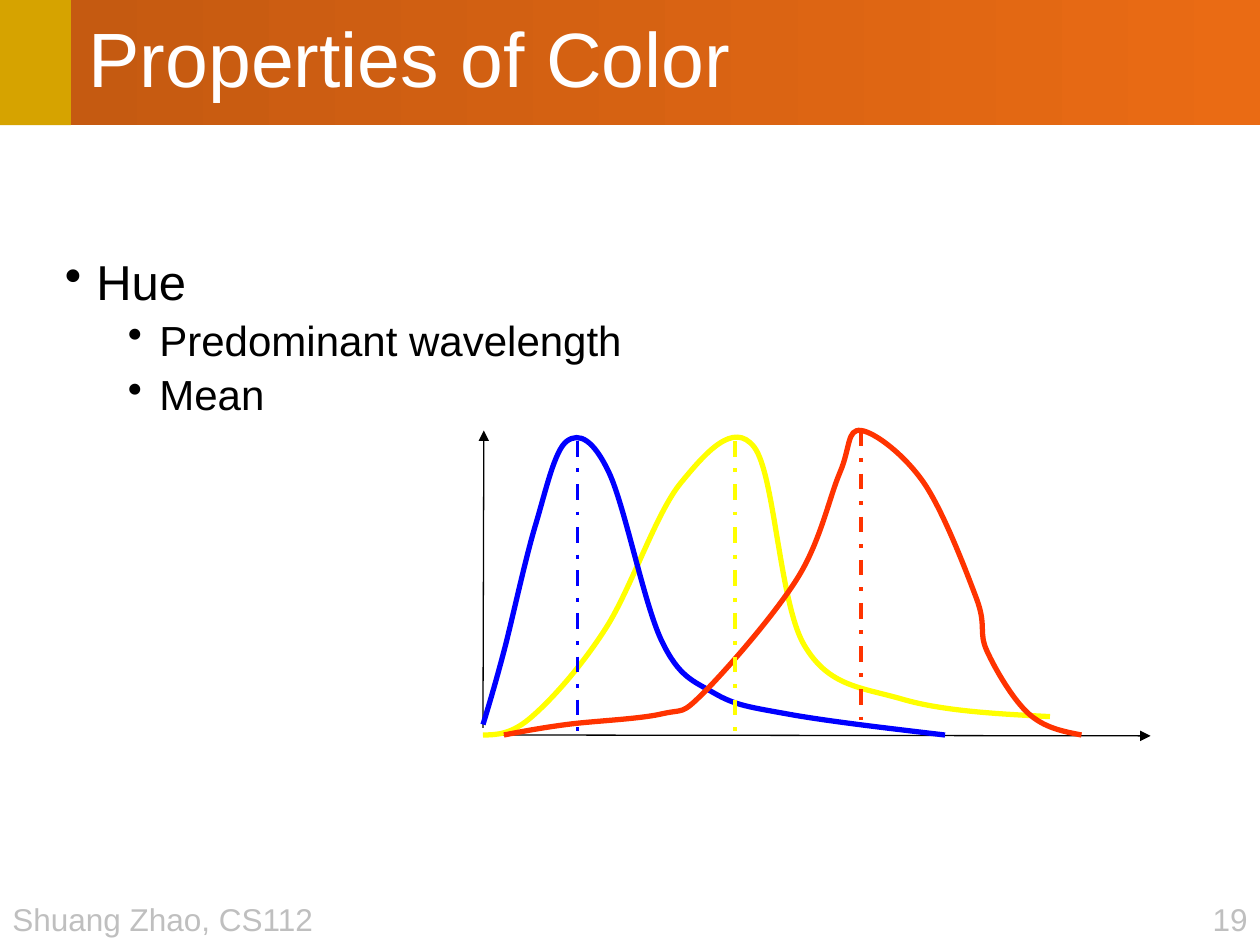
import pptx
import pptx.util
import pptx.dml.color
import pptx.enum.dml
import pptx.enum.shapes
import pptx.enum.text
import pptx.oxml
import pptx.oxml.ns

Pt = pptx.util.Pt
ALIGN = pptx.enum.text.PP_ALIGN
RECTANGLE = pptx.enum.shapes.MSO_SHAPE.RECTANGLE
STRAIGHT = pptx.enum.shapes.MSO_CONNECTOR.STRAIGHT
DRAWING = pptx.oxml.ns.nsdecls("a")

BLACK, WHITE, GRAY, GOLD = "000000", "FFFFFF", "BFBFBF", "D6A300"
DARK_ORANGE, ORANGE = "C55A11", "EA6B14"
BLUE, YELLOW, RED = "0000FF", "FFFF00", "FF3300"


def color(value):
    return pptx.dml.color.RGBColor.from_string(value)


def write(paragraph, text, size, hue, align=ALIGN.LEFT, spacing=1.0,
          before=0, margin=0, indent=0, bullet=None):
    paragraph.alignment = align
    paragraph.line_spacing = spacing
    paragraph.space_before = Pt(before)
    run = paragraph.add_run()
    run.text = text
    run.font.name = "Arial"
    run.font.size = Pt(size)
    run.font.color.rgb = color(hue)
    properties = paragraph._p.get_or_add_pPr()
    properties.set("marL", str(Pt(margin)))
    properties.set("indent", str(Pt(indent)))
    if bullet:
        properties.append(pptx.oxml.parse_xml(f'<a:buChar {DRAWING} char="{bullet}"/>'))


slide_width, slide_height = 720, 540
header_height, accent_width = 71.5, 40.5

deck = pptx.Presentation()
deck.slide_width, deck.slide_height = Pt(slide_width), Pt(slide_height)
shapes = deck.slides.add_slide(deck.slide_layouts[6]).shapes

accent = shapes.add_shape(RECTANGLE, 0, 0, Pt(accent_width), Pt(header_height))
accent.fill.solid()
accent.fill.fore_color.rgb = color(GOLD)

title = shapes.add_shape(RECTANGLE, Pt(accent_width), 0,
                         Pt(slide_width - accent_width), Pt(header_height))
title.fill.gradient()
title.fill.gradient_angle = 0
for stop, position, hue in zip(title.fill.gradient_stops, (0, 1), (DARK_ORANGE, ORANGE)):
    stop.position = position
    stop.color.rgb = color(hue)
title.text_frame.word_wrap = True
title.text_frame.vertical_anchor = pptx.enum.text.MSO_ANCHOR.MIDDLE
write(title.text_frame.paragraphs[0], "Properties of Color", 44, WHITE, spacing=0.9, margin=3)

for band in (accent, title):
    band.line.fill.background()
    band.shadow.inherit = False

footer_height, number_width, author_width = 29, 37, 188
for text, left, width, align in (
    ("19", slide_width - number_width, number_width, ALIGN.RIGHT),
    ("Shuang Zhao, CS112", 0, author_width, ALIGN.LEFT),
):
    footer = shapes.add_textbox(Pt(left), Pt(slide_height - footer_height),
                                Pt(width), Pt(footer_height)).text_frame
    footer.word_wrap = False
    footer.auto_size = pptx.enum.text.MSO_AUTO_SIZE.SHAPE_TO_FIT_TEXT
    write(footer.paragraphs[0], text, 18, GRAY, align=align)

body = shapes.add_textbox(Pt(30), Pt(144), Pt(419), Pt(339)).text_frame
body.word_wrap = True
hue_point = body.paragraphs[0]
write(hue_point, "Hue", 28, BLACK, spacing=0.9, before=10, margin=18, indent=-18, bullet="•")
for text in ("Predominant wavelength", "Mean"):
    write(body.add_paragraph(), text, 24, BLACK, spacing=0.9, before=5,
          margin=54, indent=-18, bullet="•")

origin_x, baseline = 276, 420
axes = [
    shapes.add_connector(STRAIGHT, Pt(origin_x), Pt(416), Pt(origin_x + 0.5), Pt(246)),
    shapes.add_connector(STRAIGHT, Pt(origin_x + 1), Pt(baseline), Pt(657.5), Pt(baseline + 0.5)),
]

spectra = {
    YELLOW: [(origin_x, baseline), (304, 409.5), (346.5, 358.5), (389, 276),
             (431, 255.5), (459.5, 368.5), (515.5, 399.5), (600, 409.5)],
    BLUE: [(origin_x, 414), (288, 372), (306, 300), (324, 252), (348, 270),
           (378, 366), (408, 396), (450, 408), (540, baseline)],
    RED: [(288, baseline), (324, 414), (378, 408), (402, 396), (456, 330), (480, 270),
          (492, 246), (528, 276), (558, 342), (564, 372), (588, 408), (618, baseline)],
}
for hue, knots in spectra.items():
    handles = []
    for (before_x, before_y), (x, y), (after_x, after_y) in zip(knots, knots[1:], knots[2:]):
        slope_x, slope_y = (after_x - before_x) / 6, (after_y - before_y) / 6
        handles += [(x - slope_x, y - slope_y), (x, y), (x + slope_x, y + slope_y)]
    first, last = [((knot[0] + handle[0]) / 2, (knot[1] + handle[1]) / 2)
                   for knot, handle in ((knots[0], handles[0]), (knots[-1], handles[-1]))]

    builder = shapes.build_freeform(*map(Pt, knots[0]), scale=1.0)
    builder.add_line_segments(
        [(Pt(x), Pt(y)) for x, y in [first, *handles, last, knots[-1]]], close=False)
    spectrum = builder.convert_to_shape()
    spectrum.fill.background()
    spectrum.line.color.rgb = color(hue)
    spectrum.line.width = Pt(3)
    spectrum.shadow.inherit = False

    outline = next(spectrum._element.iter(pptx.oxml.ns.qn("a:path")))
    segments = iter(outline.findall(pptx.oxml.ns.qn("a:lnTo")))
    for triple in zip(segments, segments, segments):
        bezier = pptx.oxml.parse_xml(f"<a:cubicBezTo {DRAWING}/>")
        outline.append(bezier)
        for segment in triple:
            bezier.append(segment[0])
            outline.remove(segment)

mean_height = 168
peaks = {BLUE: (330, 252), YELLOW: (420, 252), RED: (492, 246)}
means = [shapes.add_connector(STRAIGHT, Pt(x), Pt(top), Pt(x), Pt(top + mean_height))
         for x, top in peaks.values()]

for axis in axes:
    axis.line.color.rgb = color(BLACK)
    axis.line.width = Pt(0.75)
    axis.line._get_or_add_ln().append(
        pptx.oxml.parse_xml(f'<a:tailEnd {DRAWING} type="triangle"/>'))

for mean, hue in zip(means, peaks):
    mean.line.color.rgb = color(hue)
    mean.line.width = Pt(2.25)
    mean.line.dash_style = pptx.enum.dml.MSO_LINE.DASH_DOT

for line in axes + means:
    line._element.spPr.append(pptx.oxml.parse_xml(f"<a:effectLst {DRAWING}/>"))

deck.save("out.pptx")
